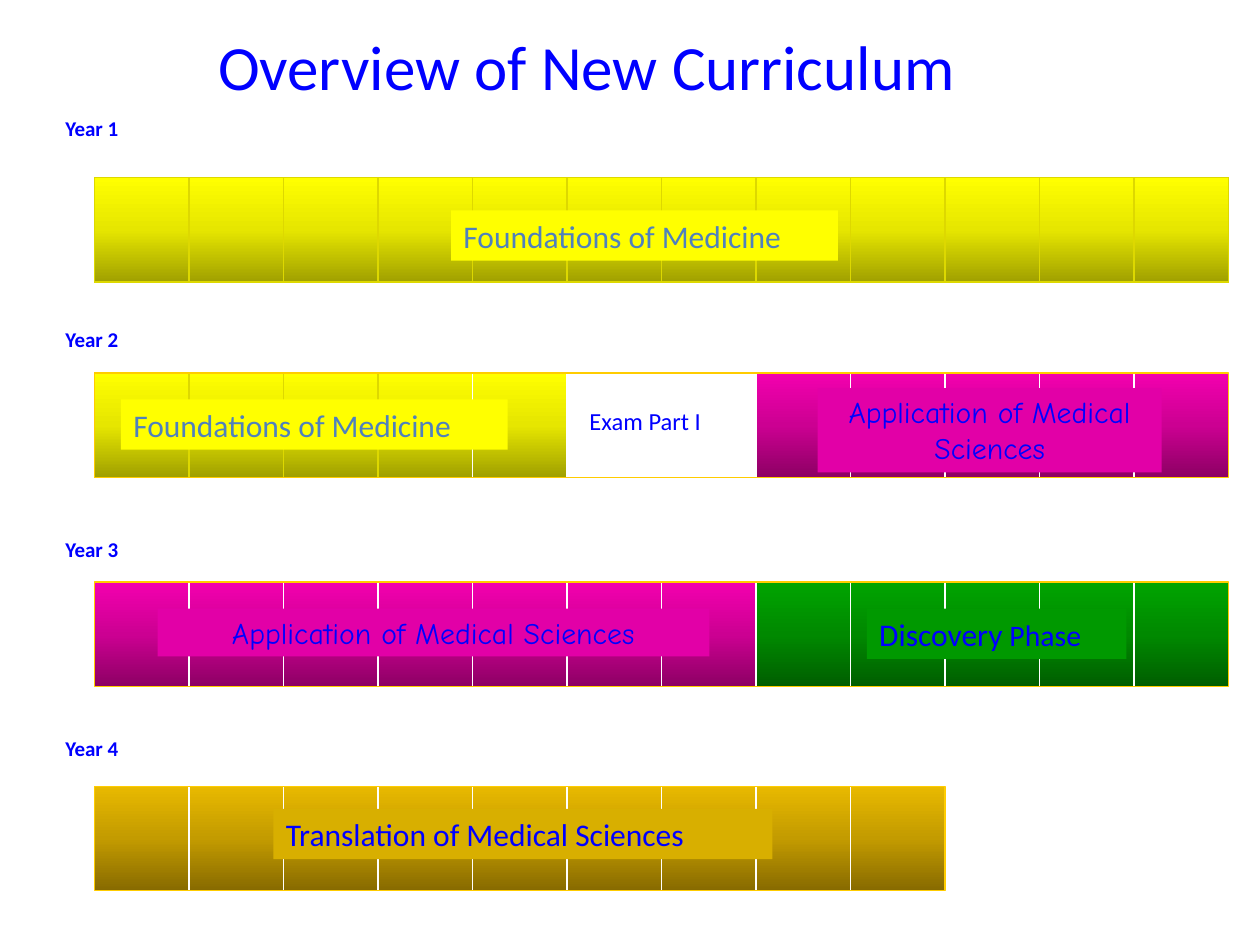
from copy import deepcopy

from pptx import Presentation
from pptx.dml.color import RGBColor
from pptx.enum.shapes import MSO_SHAPE
from pptx.enum.text import PP_ALIGN
from pptx.util import Inches, Pt

COLORS = {
    "text": "0000FF", "steel": "4F81BD", "white": "FFFFFF",
    "olive": "DDD800", "gold": "FFCC00",
    "foundations": "FFFF00", "application": "E200A7",
    "discovery": "009900", "translation": "D8AF00",
}
# Gradient stops from the bottom of a band to its top
SHADES = {
    "foundations": ("A0A000", "E6E600", "FFFF00"),
    "application": ("8D0064", "CC0092", "F300AF"),
    "discovery": ("005E00", "008900", "00A400"),
    "translation": ("876A00", "C39B00", "E8B900"),
}
BAR_LEFT, MONTH, BAR_HEIGHT = 0.75, 0.75, 0.83


def rgb(name):
    return RGBColor.from_string(COLORS[name])


class CurriculumSlide:
    def __init__(self, slide):
        self.shapes = slide.shapes

    def bar(self, top, first, months, line=None, phase=None):
        """Draw a rectangle over a run of months, counted from 0."""
        bar = self.shapes.add_shape(
            MSO_SHAPE.RECTANGLE, Inches(BAR_LEFT + first * MONTH), Inches(top),
            Inches(months * MONTH), Inches(BAR_HEIGHT))
        bar.shadow.inherit = False
        if phase:
            self.shade(bar.fill, SHADES[phase])
        else:
            bar.fill.background()
        if line:
            bar.line.color.rgb = rgb(line)
            bar.line.width = Pt(0.75)
        else:
            bar.line.fill.background()

    def shade(self, fill, shades):
        """Fill with three even gradient stops, rising from the bottom."""
        fill.gradient()
        fill.gradient_angle = 90
        first = fill.gradient_stops[0]._gs
        first.addnext(deepcopy(first))
        for stop, position, shade in zip(fill.gradient_stops, (0, 0.5, 1), shades):
            stop.position = position
            stop.color.rgb = RGBColor.from_string(shade)

    def months(self, top, lines):
        for month, line in enumerate(lines):
            self.bar(top, month, 1, line)

    def label(self, lines, left, top, width, height, size, color="text", fill=None,
              font="Calibri", bold=False, align=PP_ALIGN.LEFT):
        """Write one paragraph per line; a line is a list of (text, size or None)."""
        box = self.shapes.add_textbox(
            Inches(left), Inches(top), Inches(width), Inches(height))
        if fill:
            box.fill.solid()
            box.fill.fore_color.rgb = rgb(fill)
        frame = box.text_frame
        frame.word_wrap = True
        for index, line in enumerate(lines):
            paragraph = frame.add_paragraph() if index else frame.paragraphs[0]
            paragraph.alignment = align
            paragraph.font.name = font
            paragraph.font.size = Pt(size)
            paragraph.font.bold = bold
            paragraph.font.color.rgb = rgb(color)
            for text, run_size in line:
                run = paragraph.add_run()
                run.text = text
                if run_size:
                    run.font.size = Pt(run_size)


# Year: label top, bar top, bar outline, month outlines,
# phases as (name, first month, months, outline)
YEARS = {
    "Year 1": (0.87, 1.41, "olive", ["olive"] * 12,
               [("foundations", 0, 12, "olive")]),
    "Year 2": (2.54, 2.96, "gold", ["olive"] * 4 + ["white"] * 8,
               [("foundations", 0, 5, "olive"), ("application", 7, 5, "white")]),
    "Year 3": (4.21, 4.62, "gold", ["white"] * 12,
               [("application", 0, 7, None), ("discovery", 7, 5, "white")]),
    "Year 4": (5.79, 6.24, "gold", ["white"] * 9,
               [("translation", 0, 9, None)]),
}


def main():
    deck = Presentation()
    deck.slide_width, deck.slide_height = Inches(10), Inches(7.5)
    page = CurriculumSlide(deck.slides.add_slide(deck.slide_layouts[6]))

    page.label([[("Overview of New Curriculum", None)]], 1.21, 0.17, 6.89, 0.71, 36,
               align=PP_ALIGN.CENTER)
    for year, (label_top, top, outline, month_lines, phases) in YEARS.items():
        page.label([[(year, None)]], 0.42, label_top, 0.75, 0.3, 12, bold=True)
        for phase, first, months, line in phases:
            page.bar(top, first, months, line, phase)
        page.months(top, month_lines)
        page.bar(top, 0, len(month_lines), outline)

    for left, top in ((3.58, 1.67), (0.96, 3.17)):
        page.label([[("Foundations of Medicine", None)]], left, top, 3.07, 0.4, 18,
                   "steel", "foundations")
    page.label([[("Exam Part I", None)]], 4.58, 3.17, 1.42, 0.33, 14)
    for lines, left, top, width, height in (
            (["Application of Medical", "Sciences"], 6.49, 3.08, 2.73, 0.67),
            (["Application of Medical Sciences"], 1.25, 4.83, 4.38, 0.38)):
        page.label([[(line, None)] for line in lines], left, top, width, height, 17,
                   fill="application", font="Comic Neue", align=PP_ALIGN.CENTER)
    page.label([[("Discovery", None), (" Phase", 17)]], 6.88, 4.83, 2.06, 0.4, 18,
               fill="discovery")
    page.label([[("Translation of Medical Sciences", None)]], 2.17, 6.42, 3.96, 0.4, 18,
               fill="translation")

    deck.save("out.pptx")


if __name__ == "__main__":
    main()
